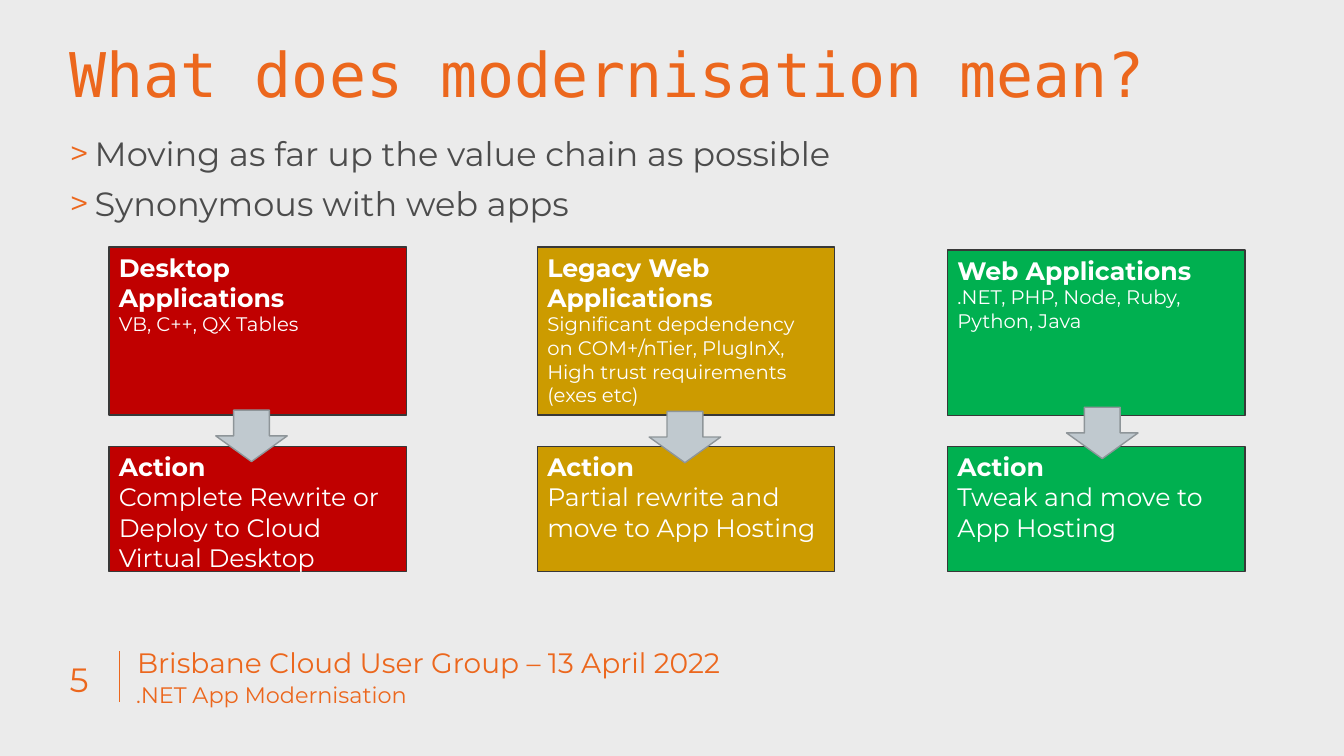
"""Build the slide that explains what modernisation means."""
from lxml import etree
from pptx import Presentation
from pptx.dml.color import RGBColor
from pptx.enum.shapes import MSO_CONNECTOR, MSO_SHAPE
from pptx.enum.text import MSO_ANCHOR as Anchor, PP_ALIGN as Align
from pptx.oxml.ns import qn
from pptx.util import Pt

BODY_FONT = "Montserrat"
TITLE_FONT = "DejaVu Sans Mono"
BACKGROUND = RGBColor(0xEB, 0xEB, 0xEB)
ORANGE = RGBColor(0xEC, 0x67, 0x1D)
GREY_TEXT = RGBColor(0x4C, 0x4C, 0x4C)
WHITE = RGBColor(0xFF, 0xFF, 0xFF)
BOX_LINE = RGBColor(0x38, 0x38, 0x38)
ARROW_FILL = RGBColor(0xC0, 0xC9, 0xCF)
ARROW_LINE = RGBColor(0x8E, 0x95, 0x99)
RED = RGBColor(0xC0, 0x00, 0x00)
GOLD = RGBColor(0xCC, 0x9B, 0x00)
GREEN = RGBColor(0x00, 0xB0, 0x50)

TITLE = "What does modernisation mean?"
BULLETS = ["Moving as far up the value chain as possible", "Synonymous with web apps"]
PAGE_NUMBER = "5"
EVENT = "Brisbane Cloud User Group – 13 April 2022"
TALK = ".NET App Modernisation"
COLUMNS = [
    {"fill": RED, "left": 77.8, "top": 176.4, "arrow": (154.1, 293),
     "heading": "Desktop Applications", "detail": "VB, C++, QX Tables",
     "action": "Complete Rewrite or Deploy to Cloud Virtual Desktop"},
    {"fill": GOLD, "left": 383.8, "top": 176.4, "arrow": (463.7, 293.8),
     "heading": "Legacy Web Applications",
     "detail": "Significant depdendency on COM+/nTier, PlugInX, "
               "High trust requirements (exes etc)",
     "action": "Partial rewrite and move to App Hosting"},
    {"fill": GREEN, "left": 676.8, "top": 178.6, "arrow": (761.8, 290.9),
     "heading": "Web Applications", "detail": ".NET, PHP, Node, Ruby, Python, Java",
     "action": "Tweak and move to App Hosting"},
]

BOX_WIDTH = 212.4
BOX_BOTTOM = 296.6
ACTION_TOP, ACTION_HEIGHT = 319, 89.3
ARROW_WIDTH, ARROW_HEIGHT = 51.1, 36.7
MARGIN = 49.7


def add_run(paragraph, text, size, color, font=BODY_FONT, bold=False):
    run = paragraph.add_run()
    run.text = text
    run.font.name = font
    run.font.size = Pt(size)
    run.font.bold = bold
    run.font.color.rgb = color


def add_bullet(paragraph):
    properties = paragraph._p.get_or_add_pPr()
    properties.set("marL", str(Pt(18)))
    properties.set("indent", str(-Pt(18)))
    color = etree.SubElement(properties, qn("a:buClr"))
    etree.SubElement(color, qn("a:srgbClr"), val=str(ORANGE))
    etree.SubElement(properties, qn("a:buFont"), typeface=BODY_FONT)
    etree.SubElement(properties, qn("a:buChar"), char=">")


def add_text(slide, place, lines, size, color=ORANGE, font=BODY_FONT,
             anchor=Anchor.TOP, spacing=None, bulleted=False):
    frame = slide.shapes.add_textbox(*map(Pt, place)).text_frame
    frame.word_wrap = True
    frame.vertical_anchor = anchor
    frame.margin_left = frame.margin_right = frame.margin_top = frame.margin_bottom = 0
    for index, line in enumerate(lines):
        paragraph = frame.add_paragraph() if index else frame.paragraphs[0]
        if bulleted:
            add_bullet(paragraph)
        if index:
            paragraph.space_before = Pt(10)
        if spacing:
            paragraph.line_spacing = spacing
        add_run(paragraph, line, size, color, font)


def add_filled_shape(slide, kind, place, fill, line):
    shape = slide.shapes.add_shape(kind, *map(Pt, place))
    shape.shadow.inherit = False
    shape.fill.solid()
    shape.fill.fore_color.rgb = fill
    shape.line.color.rgb = line
    shape.line.width = Pt(1)
    return shape


def add_box(slide, place, fill, heading, detail, detail_size):
    shape = add_filled_shape(slide, MSO_SHAPE.RECTANGLE, place, fill, BOX_LINE)
    frame = shape.text_frame
    frame.word_wrap = True
    frame.vertical_anchor = Anchor.TOP
    add_run(frame.paragraphs[0], heading, 18, WHITE, bold=True)
    add_run(frame.add_paragraph(), detail, detail_size, WHITE)
    for paragraph in frame.paragraphs:
        paragraph.alignment = Align.LEFT


def add_footer(slide):
    divider = slide.shapes.add_connector(
        MSO_CONNECTOR.STRAIGHT, Pt(85), Pt(465.1), Pt(85), Pt(501.1))
    divider.line.color.rgb = ORANGE
    divider.line.width = Pt(0.5)
    etree.SubElement(divider._element.spPr, qn("a:effectLst"))
    add_text(slide, (MARGIN, 465.1, 38.9, 39.6), [PAGE_NUMBER], 24, anchor=Anchor.MIDDLE)
    add_text(slide, (97.9, 460.8, 632.9, 23), [EVENT], 20)
    add_text(slide, (97.2, 491, 316.8, 15.1), [TALK], 16, anchor=Anchor.BOTTOM, spacing=0.9)


def main():
    presentation = Presentation()
    presentation.slide_width, presentation.slide_height = Pt(960), Pt(540)
    slide = presentation.slides.add_slide(presentation.slide_layouts[6])
    slide.background.fill.solid()
    slide.background.fill.fore_color.rgb = BACKGROUND

    add_text(slide, (MARGIN, 44.6, 864, 58.3), [TITLE], 44, font=TITLE_FONT, spacing=Pt(34))
    add_text(slide, (MARGIN, 97.9, 864, 68.4), BULLETS, 24, GREY_TEXT,
             spacing=0.9, bulleted=True)
    for column in COLUMNS:
        left, top, fill = column["left"], column["top"], column["fill"]
        add_box(slide, (left, top, BOX_WIDTH, BOX_BOTTOM - top), fill,
                column["heading"], column["detail"], 14)
        add_box(slide, (left, ACTION_TOP, BOX_WIDTH, ACTION_HEIGHT), fill,
                "Action", column["action"], 18)
        add_filled_shape(slide, MSO_SHAPE.DOWN_ARROW,
                         (*column["arrow"], ARROW_WIDTH, ARROW_HEIGHT),
                         ARROW_FILL, ARROW_LINE)
    add_footer(slide)
    presentation.save("out.pptx")


if __name__ == "__main__":
    main()
